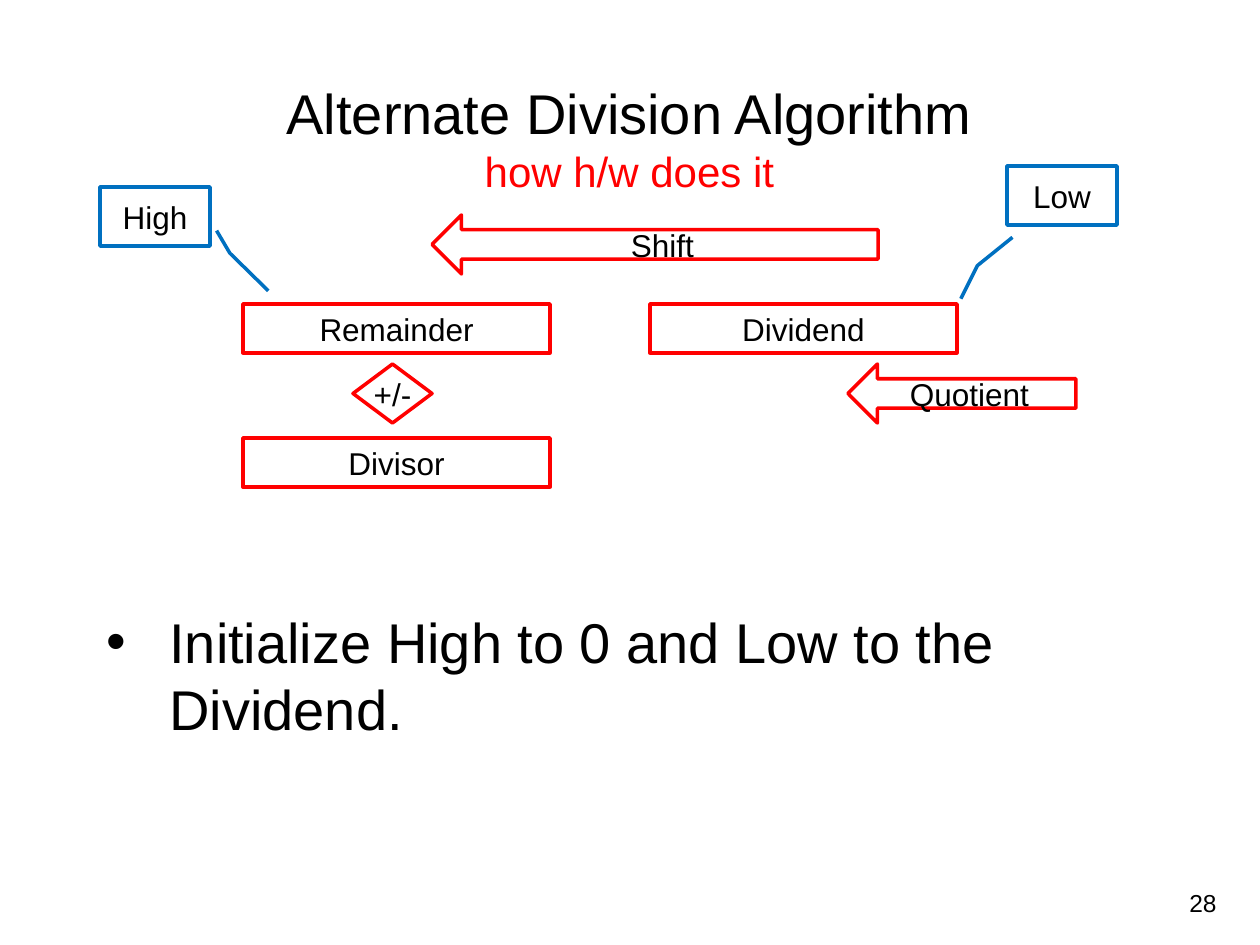
from lxml.etree import SubElement
from pptx import Presentation
from pptx.dml.color import RGBColor
from pptx.enum.shapes import MSO_SHAPE as Shape
from pptx.enum.text import MSO_ANCHOR as Anchor, MSO_AUTO_SIZE as Fit, PP_ALIGN as Align
from pptx.oxml.ns import qn
from pptx.util import Emu, Pt

SCALE = 914400 / 126  # EMU per px
BLACK, RED, BLUE = "000000", "FF0000", "0070C0"


def px(n):
    return Emu(round(n * SCALE))


def color(code):
    return RGBColor.from_string(code)


class Deck:
    font = "Arial"
    size = 18
    line = 2

    def __init__(self, wide, high):
        self.prs = Presentation()
        self.prs.slide_width, self.prs.slide_height = px(wide), px(high)
        self.slide = self.prs.slides.add_slide(self.prs.slide_layouts[6])

    def style(self, run, size, ink=BLACK):
        run.font.name = self.font
        run.font.size = Pt(size)
        run.font.color.rgb = color(ink)

    def text(self, box, words, looks, align=Align.CENTER, anchor=Anchor.MIDDLE, wrap=True):
        """Add a text box; looks holds (size, ink) for each run."""
        frame = self.slide.shapes.add_textbox(*map(px, box)).text_frame
        frame.word_wrap = wrap
        frame.vertical_anchor = anchor
        para = frame.paragraphs[0]
        para.text = words
        para.alignment = align
        for run, look in zip(para.runs, looks):
            self.style(run, *look)
        return frame

    def bullet(self, box, words, size):
        frame = self.text(box, words, [(size, BLACK)], Align.LEFT, Anchor.TOP)
        para = frame.paragraphs[0]
        para.space_before = Pt(size * 0.2)
        props = para._p.get_or_add_pPr()
        props.set("marL", str(px(63)))
        props.set("indent", str(-px(63)))
        SubElement(props, qn("a:buFont")).set("typeface", self.font)
        SubElement(props, qn("a:buChar")).set("char", "•")

    def shape(self, kind, box, words, ink=RED, adj=()):
        item = self.slide.shapes.add_shape(kind, *map(px, box))
        item.shadow.inherit = False
        item.fill.background()
        item.line.color.rgb = color(ink)
        item.line.width = Pt(self.line)
        for i, value in enumerate(adj):
            item.adjustments[i] = value
        frame = item.text_frame
        frame.text = words
        frame.word_wrap = False
        frame.vertical_anchor = Anchor.MIDDLE
        para = frame.paragraphs[0]
        para.alignment = Align.CENTER
        self.style(para.runs[0], self.size)


def main():
    deck = Deck(1260, 945)

    # Page number, title and body
    page = deck.text((1176, 882, 54, 42), "28", [(14, BLACK)], wrap=False)
    page.auto_size = Fit.SHAPE_TO_FIT_TEXT
    deck.text((94, 58, 1071, 158), "Alternate Division Algorithm\vhow h/w does it",
              [(32, BLACK), (24, RED)])
    deck.bullet((94, 601, 1071, 212), "Initialize High to 0 and Low to the Dividend.", 32)

    # Registers
    for left, top, name in ((243, 304, "Remainder"), (650, 304, "Dividend"),
                            (243, 438, "Divisor")):
        deck.shape(Shape.RECTANGLE, (left, top, 307, 49), name)

    # Operation and data flow
    deck.shape(Shape.FLOWCHART_DECISION, (353, 364, 79, 59), "+/-")
    for left, top, wide, name in ((432, 215, 446, "Shift"), (848, 364, 228, "Quotient")):
        deck.shape(Shape.LEFT_ARROW, (left, top, wide, 59), name, adj=(0.5, 0.5))

    # Callouts for the two halves
    for left, top, name, adj in (
        (100, 187, "High", (0.74, 1.06, 1.12, 1.18, 1.76, 1.53)),
        (1007, 166, "Low", (1.21, 0.05, 1.69, -0.27, 2.25, -0.42)),
    ):
        deck.shape(Shape.LINE_CALLOUT_2, (left, top, 110, 59), name, BLUE, adj)

    deck.prs.save("out.pptx")


if __name__ == "__main__":
    main()
